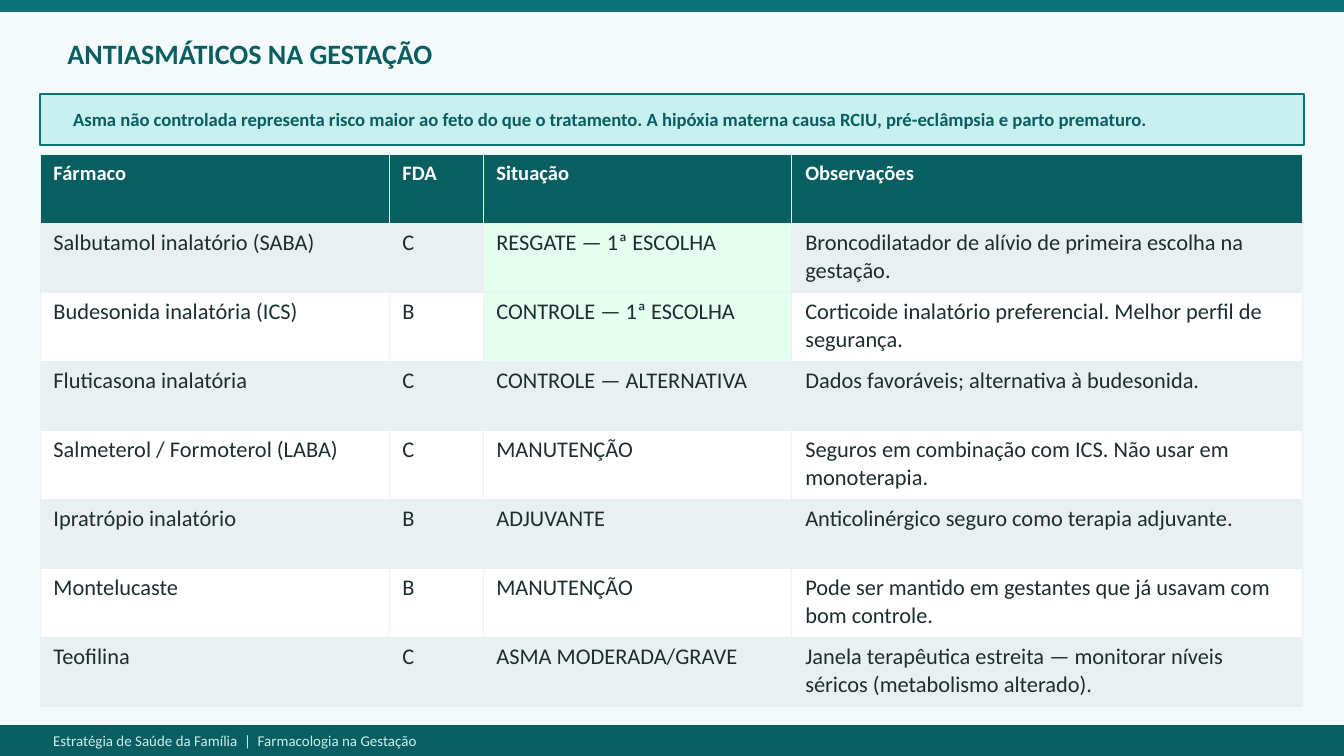
from lxml.etree import SubElement
from pptx import Presentation
from pptx.dml.color import RGBColor
from pptx.enum.shapes import MSO_SHAPE
from pptx.enum.text import MSO_ANCHOR, MSO_AUTO_SIZE, PP_ALIGN
from pptx.oxml.ns import qn
from pptx.util import Pt

TITLE = "ANTIASMÁTICOS NA GESTAÇÃO"
ALERT = ("Asma não controlada representa risco maior ao feto do que o tratamento. "
         "A hipóxia materna causa RCIU, pré-eclâmpsia e parto prematuro.")
FOOTER = "Estratégia de Saúde da Família  |  Farmacologia na Gestação"
HEADS = ("Fármaco", "FDA", "Situação", "Observações")
DRUGS = [
    ("Salbutamol inalatório (SABA)", "C", "RESGATE — 1ª ESCOLHA",
     "Broncodilatador de alívio de primeira escolha na gestação."),
    ("Budesonida inalatória (ICS)", "B", "CONTROLE — 1ª ESCOLHA",
     "Corticoide inalatório preferencial. Melhor perfil de segurança."),
    ("Fluticasona inalatória", "C", "CONTROLE — ALTERNATIVA",
     "Dados favoráveis; alternativa à budesonida."),
    ("Salmeterol / Formoterol (LABA)", "C", "MANUTENÇÃO",
     "Seguros em combinação com ICS. Não usar em monoterapia."),
    ("Ipratrópio inalatório", "B", "ADJUVANTE",
     "Anticolinérgico seguro como terapia adjuvante."),
    ("Montelucaste", "B", "MANUTENÇÃO",
     "Pode ser mantido em gestantes que já usavam com bom controle."),
    ("Teofilina", "C", "ASMA MODERADA/GRAVE",
     "Janela terapêutica estreita — monitorar níveis séricos (metabolismo alterado)."),
]
WIDTHS = (349, 94, 309, 511)
ROW = 69
WIDE, HIGH = 1344, 756
EDGE = 40

FONT = "Calibri"
PAPER = RGBColor(0xF4, 0xFA, 0xFB)
TEAL = RGBColor(0x0D, 0x73, 0x77)
DEEP = RGBColor(0x08, 0x5E, 0x61)
AQUA = RGBColor(0xC8, 0xF0, 0xF1)
MIST = RGBColor(0xE8, 0xF0, 0xF1)
MINT = RGBColor(0xE5, 0xFF, 0xF0)
INK = RGBColor(0x1E, 0x2D, 0x2F)
WHITE = RGBColor(0xFF, 0xFF, 0xFF)


def px(n):
    return round(n * 914400 / 134.4)


def write(frame, text, size, color, bold=False, anchor=MSO_ANCHOR.MIDDLE):
    frame.word_wrap = True
    frame.vertical_anchor = anchor
    line = frame.paragraphs[0]
    line.alignment = PP_ALIGN.LEFT
    run = line.add_run()
    run.text = text
    font = run.font
    font.name, font.size, font.bold = FONT, Pt(size), bold
    font.color.rgb = color


def panel(slide, x, y, w, h, fill, edge):
    shape = slide.shapes.add_shape(MSO_SHAPE.RECTANGLE, px(x), px(y), px(w), px(h))
    shape.shadow.inherit = False
    shape.fill.solid()
    shape.fill.fore_color.rgb = fill
    shape.line.color.rgb = edge
    shape.line.width = Pt(1)


def label(slide, x, y, w, h, text, **style):
    box = slide.shapes.add_textbox(px(x), px(y), px(w), px(h))
    write(box.text_frame, text, **style)


def border(cell, color, width):
    props = cell._tc.get_or_add_tcPr()
    for spot, side in enumerate(("lnL", "lnR", "lnT", "lnB")):
        line = SubElement(props, qn("a:" + side), w=str(Pt(width)))
        fill = SubElement(line, qn("a:solidFill"))
        SubElement(fill, qn("a:srgbClr"), val=str(color))
        props.insert(spot, line)


def shade(row, col, text):
    if row == 0:
        return DEEP
    if col == 2 and "1ª ESCOLHA" in text:
        return MINT
    return MIST if row % 2 else WHITE


def drugs(slide, x, y):
    rows = [HEADS] + DRUGS
    table = slide.shapes.add_table(
        len(rows), len(WIDTHS), px(x), px(y), px(sum(WIDTHS)), px(ROW * len(rows))).table
    table.horz_banding = False
    for col, width in zip(table.columns, WIDTHS):
        col.width = px(width)
    for r, texts in enumerate(rows):
        table.rows[r].height = px(ROW)
        style = dict(size=12, color=INK) if r else dict(size=11, color=WHITE, bold=True)
        for c, text in enumerate(texts):
            cell = table.cell(r, c)
            cell.fill.solid()
            cell.fill.fore_color.rgb = shade(r, c, text)
            border(cell, MIST, 0.5)
            write(cell.text_frame, text, anchor=MSO_ANCHOR.TOP, **style)


def main():
    deck = Presentation()
    deck.slide_width, deck.slide_height = px(WIDE), px(HIGH)
    slide = deck.slides.add_slide(deck.slide_layouts[5])
    slide.background.fill.solid()
    slide.background.fill.fore_color.rgb = PAPER

    panel(slide, 0, 0, WIDE, 11, TEAL, TEAL)
    panel(slide, 0, 726, WIDE, HIGH - 726, DEEP, DEEP)
    label(slide, EDGE, 727, WIDE - 2 * EDGE, 27, FOOTER, size=8, color=AQUA)

    title = slide.shapes.title
    title.left, title.top, title.width, title.height = px(54), px(20), px(1236), px(67)
    write(title.text_frame, TITLE, size=15, color=DEEP, bold=True)
    title.text_frame.auto_size = MSO_AUTO_SIZE.NONE

    panel(slide, EDGE, 94, WIDE - 2 * EDGE, 51, AQUA, TEAL)
    label(slide, 60, 94, WIDE - 120, 51, ALERT, size=10, color=DEEP, bold=True)
    drugs(slide, EDGE, 154)
    deck.save("out.pptx")


if __name__ == "__main__":
    main()
